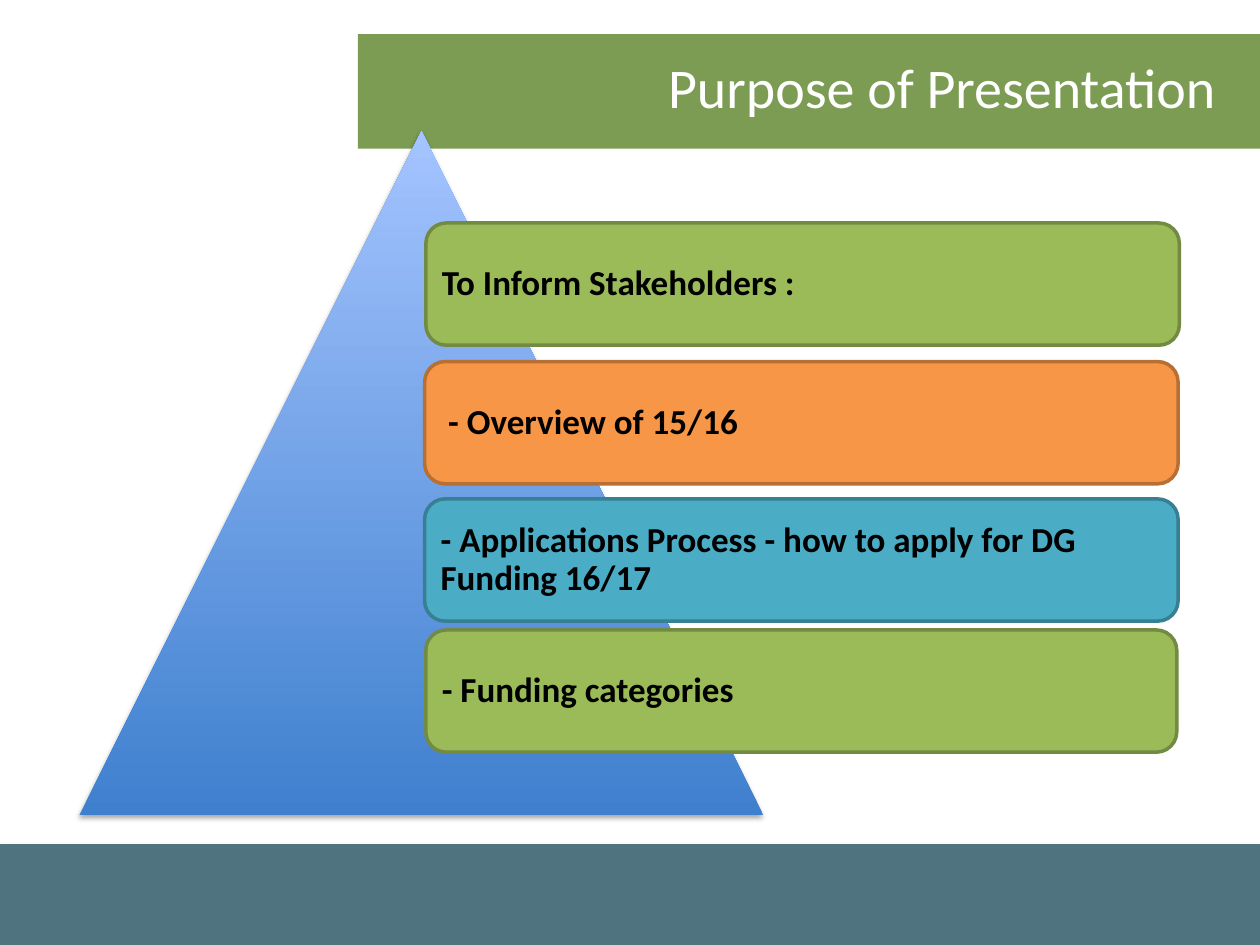
from lxml import etree
from pptx import Presentation, util as u
from pptx.dml.color import RGBColor
from pptx.enum import shapes, text
from pptx.oxml import ns

WIDTH, HEIGHT = 10, 7.5
SHAPE = shapes.MSO_SHAPE

# label, fill, outline, (left, top, width), left inset
PURPOSES = [
    ("To Inform Stakeholders :", "9BBB59", "738A42", (3.38, 1.77, 5.98), 0.08),
    ("- Overview of 15/16", "F79646", "B76F34", (3.37, 2.87, 5.98), 0.14),
    ("- Applications Process - how to apply for DG Funding 16/17",
     "4BACC6", "377F92", (3.37, 3.96, 5.98), 0.08),
    ("- Funding categories", "9BBB59", "738A42", (3.38, 5, 5.96), 0.08),
]
CARD_HEIGHT = 0.97


def color(hex_code):
    return RGBColor.from_string(hex_code)


def inches(box):
    return [u.Inches(length) for length in box]


def add_block(slide, kind, box, fill=None):
    block = slide.shapes.add_shape(kind, *inches(box))
    block.shadow.inherit = False
    block.line.fill.background()
    if fill:
        block.fill.solid()
        block.fill.fore_color.rgb = color(fill)
    return block


def add_soft_shadow(block):
    effects = block._element.spPr.find(ns.qn("a:effectLst"))
    shadow = etree.SubElement(effects, ns.qn("a:outerShdw"), blurRad=str(u.Pt(3.1)),
                              dist=str(u.Pt(1.8)), dir="5400000", rotWithShape="0")
    black = etree.SubElement(shadow, ns.qn("a:srgbClr"), val="000000")
    etree.SubElement(black, ns.qn("a:alpha"), val="35000")


def write(frame, words, size, hex_code, align, bold=False):
    frame.word_wrap = True
    frame.vertical_anchor = text.MSO_ANCHOR.MIDDLE
    frame.text = words
    line = frame.paragraphs[0]
    line.alignment = align
    font = line.runs[0].font
    font.name, font.size, font.bold = "Calibri", u.Pt(size), bold
    font.color.rgb = color(hex_code)
    return line


def add_footer(slide, box):
    add_soft_shadow(add_block(slide, SHAPE.RECTANGLE, box, "4F737F"))


def add_header(slide, band_box, title_box):
    add_block(slide, SHAPE.RECTANGLE, band_box, "7B9C52")
    # The title is added by the caller's order, above the pyramid
    return lambda: write(slide.shapes.add_textbox(*inches(title_box)).text_frame,
                         "Purpose of Presentation", 32, "FFFFFF", text.PP_ALIGN.RIGHT)


def add_pyramid(slide, box):
    pyramid = add_block(slide, SHAPE.ISOSCELES_TRIANGLE, box)
    pyramid.fill.gradient()
    pyramid.fill.gradient_angle = 90
    for stop, place, shade in zip(pyramid.fill.gradient_stops, (0, 1), ("3F80CE", "A4C4FF")):
        stop.position = place
        stop.color.rgb = color(shade)
    add_soft_shadow(pyramid)


def add_purpose(slide, box, words, fill, outline, left_inset):
    card = add_block(slide, SHAPE.ROUNDED_RECTANGLE, box, fill)
    card.line.color.rgb = color(outline)
    card.line.width = u.Pt(2)
    frame = card.text_frame
    frame.margin_left = u.Inches(left_inset)
    frame.margin_top = frame.margin_right = frame.margin_bottom = u.Inches(0.08)
    write(frame, words, 20, "000000", text.PP_ALIGN.LEFT, bold=True).line_spacing = 0.9


def main():
    deck = Presentation()
    deck.slide_width, deck.slide_height = inches((WIDTH, HEIGHT))
    slide = deck.slides.add_slide(deck.slide_layouts[6])

    # Background bands
    add_footer(slide, (0, 6.7, WIDTH, HEIGHT - 6.7))
    add_title = add_header(slide, (2.84, 0.27, WIDTH - 2.84, 0.91), (0.75, 0.06, 9, 1.25))

    # Pyramid list
    add_pyramid(slide, (0.63, 1.04, 5.43, 5.43))
    for words, fill, outline, place, left_inset in PURPOSES:
        add_purpose(slide, (*place, CARD_HEIGHT), words, fill, outline, left_inset)

    # Title
    add_title()
    deck.save("out.pptx")


if __name__ == "__main__":
    main()
